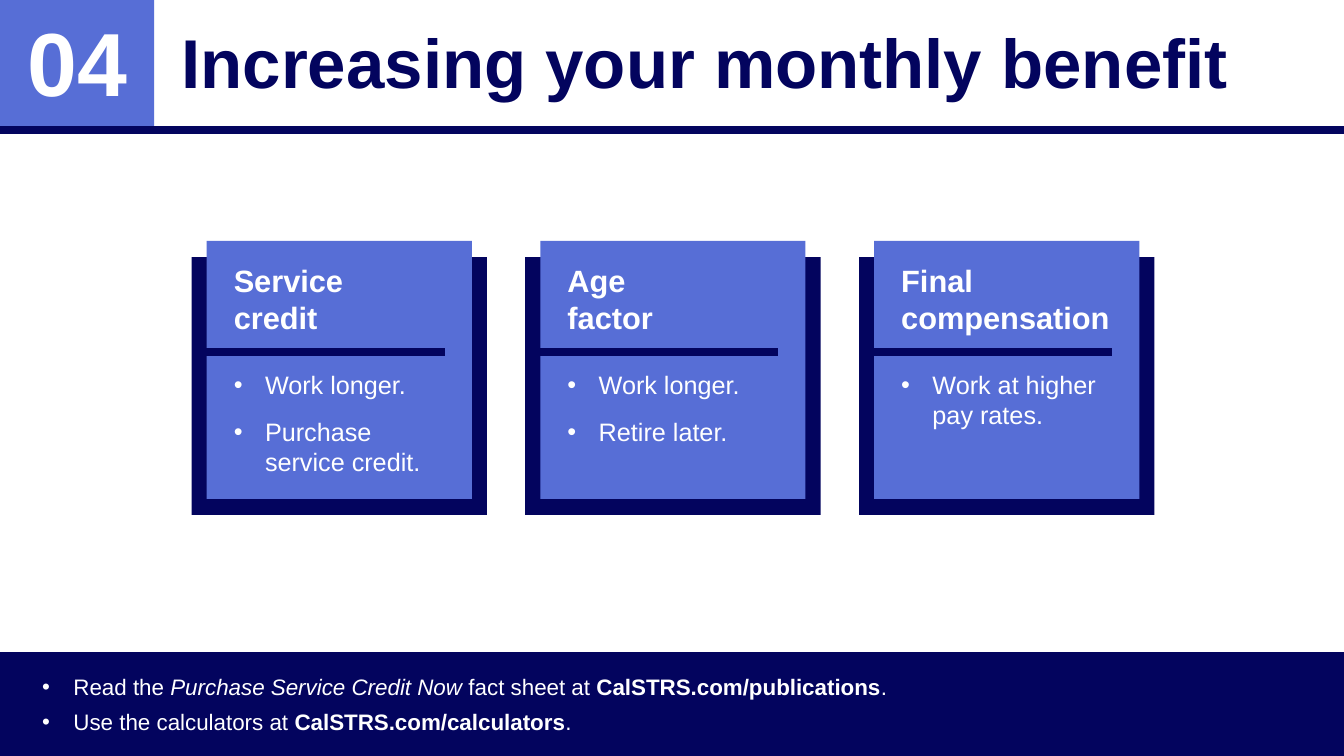
from lxml.etree import SubElement
from pptx import Presentation
from pptx.dml.color import RGBColor
from pptx.enum.shapes import MSO_CONNECTOR, MSO_SHAPE
from pptx.enum.text import MSO_ANCHOR, MSO_AUTO_SIZE, PP_ALIGN
from pptx.oxml.ns import qn
from pptx.util import Inches, Pt

NAVY, BLUE, WHITE = "03045E", "576ED6", "FFFFFF"
CARDS = [
    ("Service\ncredit", ["Work longer.", "Purchase service credit."]),
    ("Age\nfactor", ["Work longer.", "Retire later."]),
    ("Final compensation", ["Work at higher pay rates."]),
]
RESOURCES = [
    [("Read the ", {}), ("Purchase Service Credit Now ", {"italic": True}),
     ("fact sheet at ", {}), ("CalSTRS.com/publications", {"bold": True}), (".", {})],
    [("Use the calculators at ", {}), ("CalSTRS.com/calculators", {"bold": True}), (".", {})],
]


def color(value):
    return RGBColor.from_string(value)


def write(para, text, size, fill=WHITE, bold=False, italic=False):
    for index, line in enumerate(text.split("\n")):
        if index:
            para.add_line_break()
        span = para.add_run()
        span.text = line
        span.font.name = "Arial"
        span.font.size = Pt(size)
        span.font.bold = bold
        span.font.italic = italic
        span.font.color.rgb = color(fill)


class SlideBuilder:
    def __init__(self, deck):
        self.page = deck.slides.add_slide(deck.slide_layouts[5])

    def panel(self, left, top, width, height, fill):
        box = self.page.shapes.add_shape(
            MSO_SHAPE.RECTANGLE, Inches(left), Inches(top), Inches(width), Inches(height))
        box.shadow.inherit = False
        box.fill.solid()
        box.fill.fore_color.rgb = color(fill)
        box.line.fill.background()

    def rule(self, left, top, width):
        line = self.page.shapes.add_connector(
            MSO_CONNECTOR.STRAIGHT, Inches(left), Inches(top), Inches(left + width), Inches(top))
        line.line.color.rgb = color(NAVY)
        line.line.width = Pt(6)
        SubElement(line._element.spPr, qn("a:effectLst"))

    def text_frame(self, left, top, width, height, anchor=MSO_ANCHOR.TOP):
        box = self.page.shapes.add_textbox(
            Inches(left), Inches(top), Inches(width), Inches(height))
        box.text_frame.word_wrap = True
        box.text_frame.vertical_anchor = anchor
        return box.text_frame

    def title(self, text, left, top, width, height):
        box = self.page.shapes.title
        box.left, box.top = Inches(left), Inches(top)
        box.width, box.height = Inches(width), Inches(height)
        frame = box.text_frame
        frame.auto_size = MSO_AUTO_SIZE.NONE
        frame.word_wrap = True
        frame.vertical_anchor = MSO_ANCHOR.MIDDLE
        para = frame.paragraphs[0]
        para.alignment = PP_ALIGN.LEFT
        para.line_spacing = 0.9
        write(para, text, 49.3, NAVY, bold=True)

    def number(self, text):
        self.panel(0, 0, 1.53, 1.29, BLUE)
        para = self.text_frame(0.17, 0.19, 1.2, 0.96, MSO_ANCHOR.MIDDLE).paragraphs[0]
        para.alignment = PP_ALIGN.CENTER
        para.line_spacing = 0.9
        write(para, text, 64, bold=True)

    def bullet(self, para, spans, size, space_after):
        properties = para._p.get_or_add_pPr()
        properties.set("marL", str(Inches(0.31)))
        properties.set("indent", str(-Inches(0.31)))
        SubElement(properties, qn("a:buFont"), typeface="Arial")
        SubElement(properties, qn("a:buChar"), char="•")
        para.space_after = Pt(space_after)
        for text, style in spans:
            write(para, text, size, **style)

    def card(self, left, heading, points):
        self.panel(left, 2.55, 2.93, 2.56, NAVY)
        self.panel(left + 0.15, 2.39, 2.63, 2.56, BLUE)
        frame = self.text_frame(left + 0.32, 2.55, 2.28, 2.26)
        para = frame.paragraphs[0]
        para.space_after = Pt(24)
        write(para, heading, 22, bold=True)
        for point in points:
            self.bullet(frame.add_paragraph(), [(point, {})], 18, 12)
        self.rule(left + 0.05, 3.49, 2.46)

    def footer(self, items):
        self.panel(0, 6.47, 13.33, 1.03, NAVY)
        frame = self.text_frame(0.32, 6.63, 9.59, 0.72)
        for index, spans in enumerate(items):
            para = frame.add_paragraph() if index else frame.paragraphs[0]
            self.bullet(para, spans, 16, 6)


def main():
    deck = Presentation()
    deck.slide_width, deck.slide_height = Inches(13.33), Inches(7.5)
    slide = SlideBuilder(deck)
    slide.number("04")
    slide.rule(0, 1.29, 13.33)
    slide.title("Increasing your monthly benefit", 1.7, 0.01, 11.46, 1.29)
    slide.footer(RESOURCES)
    for column, (heading, points) in enumerate(CARDS):
        slide.card(1.9 + 3.31 * column, heading, points)
    deck.save("out.pptx")


if __name__ == "__main__":
    main()
